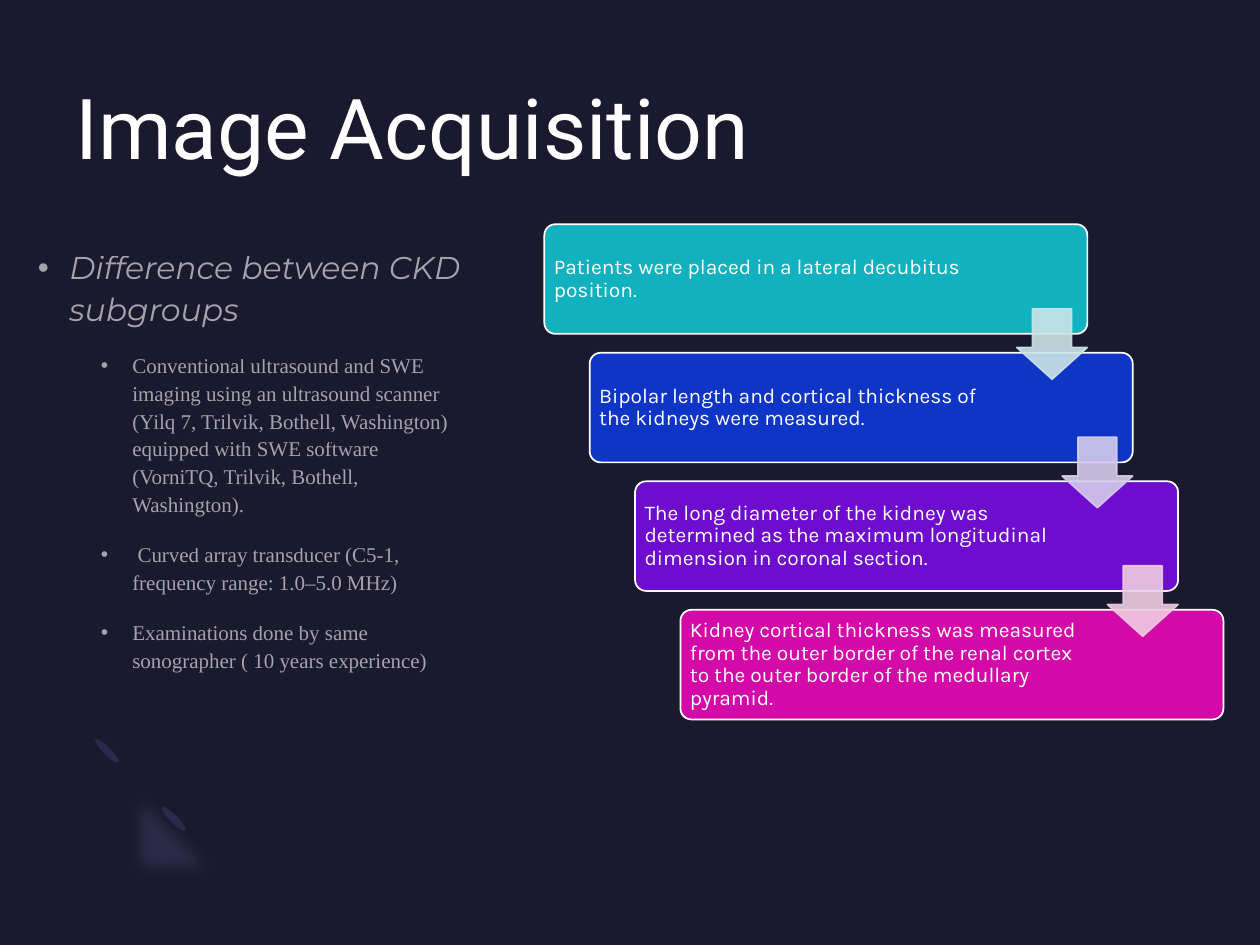
from dataclasses import dataclass

from lxml.etree import SubElement
from pptx import Presentation
from pptx.dml.color import RGBColor
from pptx.enum.shapes import MSO_SHAPE
from pptx.enum.text import MSO_ANCHOR, MSO_AUTO_SIZE, PP_ALIGN
from pptx.oxml.ns import qn
from pptx.util import Inches, Pt


@dataclass(frozen=True)
class Theme:
    back: str = "1B192E"
    white: str = "FFFFFF"
    leaf: str = "2C284A"
    haze: str = "7771B2"
    steps: tuple = ("12B1BF", "0F35C6", "6E0DCD", "D40AA8")
    arrows: tuple = ("CCE4E8", "D5CCEC", "EFCCE2")
    title: tuple = ("Roboto", 48)
    lead: tuple = ("Montserrat", 18)
    point: tuple = ("Times New Roman", 12)
    step: tuple = ("Karla", 12)


LEAD = "Difference between CKD subgroups"
POINTS = (
    "Conventional ultrasound and SWE imaging using an ultrasound scanner "
    "(Yilq 7, Trilvik, Bothell, Washington) equipped with SWE software "
    "(VorniTQ, Trilvik, Bothell, Washington).",
    " Curved array transducer (C5-1, frequency range: 1.0–5.0 MHz)",
    "Examinations done by same sonographer ( 10 years experience)",
)
STEPS = (
    "Patients were placed in a lateral decubitus position.",
    "Bipolar length and cortical thickness of the kidneys were measured.",
    "The long diameter of the kidney was determined as the maximum "
    "longitudinal dimension in coronal section.",
    "Kidney cortical thickness was measured from the outer border of the "
    "renal cortex to the outer border of the medullary pyramid.",
)
OUTER = ((0.76, 6.59), (0.56, 6.39), (0.58, 6.05), (0.81, 5.82))
INNER = (
    ((0.99, 6), (0.87, 6.11), (0.86, 6.29), (0.96, 6.38)),
    ((0.96, 6.38), (1.06, 6.48), (1.23, 6.47), (1.35, 6.36)),
)
CLOSE = ((1.52, 6.54), (1.3, 6.76), (0.95, 6.79), (0.76, 6.59))


def curve(points, count=12):
    for i in range(count + 1):
        t = i / count
        u = 1 - t
        parts = (u**3, 3 * u * u * t, 3 * u * t * t, t**3)
        yield tuple(sum(w * p[k] for w, p in zip(parts, points)) for k in (0, 1))


class Deck:
    def __init__(self, theme):
        self.theme = theme
        self.file = Presentation()
        self.file.slide_width, self.file.slide_height = Inches(10), Inches(7.5)
        self.slide = self.file.slides.add_slide(self.file.slide_layouts[5])
        self.paint(self.slide.background.fill, theme.back)

    def paint(self, fill, color, alpha=100):
        fill.solid()
        fill.fore_color.rgb = RGBColor.from_string(color)
        if alpha < 100:
            node = fill.fore_color._xFill[0]
            SubElement(node, qn("a:alpha")).set("val", str(alpha * 1000))

    def style(self, para, face, alpha=100, italic=False):
        para.alignment = PP_ALIGN.LEFT
        for run in para.runs:
            run.font.name, size = face
            run.font.size = Pt(size)
            run.font.italic = italic
            self.paint(run.font.fill, self.theme.white, alpha)

    def frame(self, shape, anchor, sides=(0, 0, 0, 0)):
        frame = shape.text_frame
        frame.word_wrap = True
        frame.auto_size = MSO_AUTO_SIZE.NONE
        frame.vertical_anchor = anchor
        (frame.margin_left, frame.margin_top,
         frame.margin_right, frame.margin_bottom) = map(Inches, sides)
        return frame

    def title(self, text, *box):
        shape = self.slide.shapes.title
        shape.left, shape.top, shape.width, shape.height = map(Inches, box)
        frame = self.frame(shape, MSO_ANCHOR.TOP)
        frame.text = text
        self.style(frame.paragraphs[0], self.theme.title)

    def shape(self, kind, box, color, alpha=100, edge=None):
        shape = self.slide.shapes.add_shape(kind, *map(Inches, box))
        shape.shadow.inherit = False
        self.paint(shape.fill, color, alpha)
        if edge:
            self.paint(shape.line.fill, edge, alpha)
            shape.line.width = Pt(1)
        else:
            shape.line.fill.background()
        return shape

    def leaf(self, left, top):
        shape = self.shape(MSO_SHAPE.OVAL, (left, top, 0.06, 0.26), self.theme.leaf)
        shape.rotation = -45

    def arc(self):
        dots = [d for part in (OUTER, *INNER, CLOSE) for d in curve(part)]
        pen = self.slide.shapes.build_freeform(*dots[0], scale=Inches(1))
        pen.add_line_segments(dots[1:], close=True)
        shape = pen.convert_to_shape()
        shape.shadow.inherit = False
        self.paint(shape.fill, self.theme.haze, 20)
        shape.line.fill.background()
        effect = shape._element.spPr.find(qn("a:effectLst"))
        SubElement(effect, qn("a:softEdge")).set("rad", str(Inches(0.12)))

    def bullet(self, para, level):
        para.level = level
        para.line_spacing = 1.1
        para.space_before = Pt(5 if level else 10)
        para.space_after = Pt(8)
        props = para._p.get_or_add_pPr()
        props.set("marL", str(Inches(0.75 if level else 0.25)))
        props.set("indent", str(Inches(-0.25)))
        SubElement(props, qn("a:buFont")).set("typeface", "Arial")
        SubElement(props, qn("a:buChar")).set("char", "•")

    def notes(self, lead, points, *box):
        shape = self.slide.shapes.add_textbox(*map(Inches, box))
        frame = self.frame(shape, MSO_ANCHOR.TOP)
        frame.text = "\n".join((lead, *points))
        for i, para in enumerate(frame.paragraphs):
            level = min(i, 1)
            self.bullet(para, level)
            face = self.theme.point if level else self.theme.lead
            self.style(para, face, 60, italic=not level)

    def step(self, text, left, top, color):
        shape = self.shape(MSO_SHAPE.ROUNDED_RECTANGLE, (left, top, 4.31, 0.87),
                           color, edge=self.theme.white)
        shape.adjustments[0] = 0.1
        frame = self.frame(shape, MSO_ANCHOR.MIDDLE, (0.05, 0.05, 0.98, 0.05))
        frame.text = text
        para = frame.paragraphs[0]
        para.line_spacing = 0.9
        para.space_after = Pt(4.2)
        self.style(para, self.theme.step)

    def arrow(self, left, top, color):
        shape = self.shape(MSO_SHAPE.DOWN_ARROW, (left, top, 0.56, 0.56),
                           color, 90, color)
        shape.adjustments[0] = 0.45
        shape.adjustments[1] = 0.45
        shape.adjustments[0] = 0.55


def main():
    theme = Theme()
    deck = Deck(theme)
    deck.leaf(1.35, 6.37)
    deck.leaf(0.82, 5.83)
    deck.arc()
    deck.title("Image Acquisition", 0.6, 0.6, 8.8, 1.46)
    deck.notes(LEAD, POINTS, 0.3, 1.94, 3.39, 3.62)
    right, down = 0.36, 1.02
    for i, (text, color) in enumerate(zip(STEPS, theme.steps)):
        deck.step(text, 4.32 + right * i, 1.78 + down * i, color)
    for i, color in enumerate(theme.arrows):
        deck.arrow(8.07 + right * i, 2.45 + down * i, color)
    deck.file.save("out.pptx")


if __name__ == "__main__":
    main()
